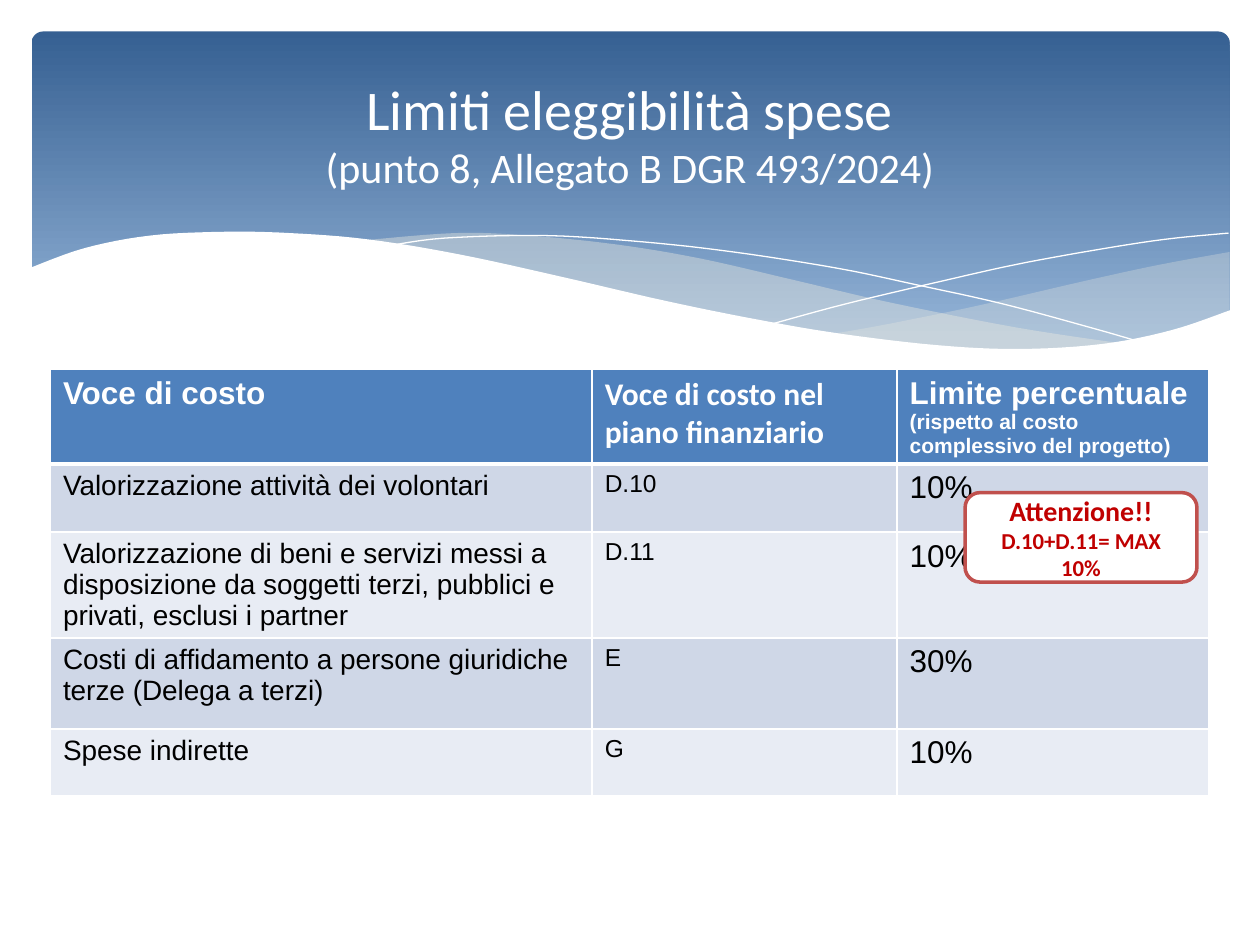
from dataclasses import dataclass

from lxml import etree
from pptx import Presentation
from pptx.dml.color import RGBColor
from pptx.enum.shapes import MSO_SHAPE
from pptx.enum.text import MSO_ANCHOR, PP_ALIGN
from pptx.oxml.ns import qn
from pptx.util import Inches, Pt

ROUNDED = MSO_SHAPE.ROUNDED_RECTANGLE
MIDDLE, TOP = MSO_ANCHOR.MIDDLE, MSO_ANCHOR.TOP
CENTER = PP_ALIGN.CENTER


@dataclass(frozen=True)
class Theme:
    """Colours, fonts and type sizes of the slide."""
    white: str = "FFFFFF"
    black: str = "000000"
    band_top: str = "366092"
    band_bottom: str = "93B3D7"
    wave: str = "EEECE1"
    header: str = "4F81BD"
    stripes: tuple = ("CFD7E7", "E8ECF4")
    alert_line: str = "C0504D"
    alert_text: str = "C00000"
    head_font: str = "Calibri"
    body_font: str = "Arial"
    title: int = 32
    subtitle: int = 24
    table_head: int = 18
    table_note: int = 12
    columns: tuple = (16, 14, 18)
    alert: int = 16
    alert_note: int = 13


T = Theme()

RIGHT_WAVE = (
    [(9.51, 1.75), (8.96, 1.85), (8.36, 1.98), (7.54, 2.17), (6.81, 2.32), (6.36, 2.4)],
    [(6.36, 2.4), (6.94, 2.47), (7.56, 2.52), (8.1, 2.52), (8.64, 2.47), (9.1, 2.37),
     (9.51, 2.22)],
)
MIDDLE_WAVE = (
    [(8.68, 2.48), (7.82, 2.35), (6.81, 2.15), (6.04, 1.97), (5.3, 1.8), (4.64, 1.69),
     (3.95, 1.62), (3.36, 1.6), (2.61, 1.66)],
    [(2.61, 1.66), (3.37, 1.78), (4.24, 1.97), (5.05, 2.15), (5.93, 2.33), (6.7, 2.45),
     (7.48, 2.52), (8.03, 2.53), (8.68, 2.48)],
)
FALLING_LINE = [(2.84, 1.7), (3.28, 1.64), (4.08, 1.62), (4.85, 1.67), (5.57, 1.75),
                (6.4, 1.88), (7.02, 2.01), (7.7, 2.16), (8.44, 2.36), (8.82, 2.47)]
RISING_LINE = [(5.88, 2.32), (6.47, 2.16), (7.23, 1.98), (7.81, 1.85), (8.41, 1.74),
               (8.99, 1.65), (9.5, 1.6)]
LOWER_EDGE = [(9.52, 2.21), (9.05, 2.37), (8.5, 2.48), (7.84, 2.52), (7.19, 2.49),
              (6.43, 2.4), (5.78, 2.29), (5.04, 2.14), (4.22, 1.95), (3.4, 1.77),
              (2.67, 1.65), (2.05, 1.6), (1.52, 1.59), (0.94, 1.62), (0.42, 1.72),
              (-0.02, 1.88)]

HEADERS = ["Voce di costo", "Voce di costo nel piano finanziario", "Limite percentuale "]
HEADER_NOTE = "(rispetto al costo complessivo del progetto)"
ROWS = [
    ("Valorizzazione attività dei volontari", "D.10", "10%"),
    ("Valorizzazione di beni e servizi messi a disposizione da soggetti terzi, "
     "pubblici e privati, esclusi i partner", "D.11", "10%"),
    ("Costi di affidamento a persone giuridiche terze (Delega a terzi)", "E", "30%"),
    ("Spese indirette", "G", "10%"),
]
COL_WIDTHS = [4.3, 2.42, 2.47]
ROW_HEIGHTS = [0.75, 0.54, 0.84, 0.72, 0.53]


def rgb(value):
    """Return the colour of a hex string."""
    return RGBColor.from_string(value)


def add_text(p, text, size, font=T.head_font, color=T.white, bold=False):
    """Add a formatted run to a paragraph."""
    r = p.add_run()
    r.text = text
    r.font.name, r.font.size, r.font.bold = font, Pt(size), bold
    r.font.color.rgb = rgb(color)


def spline(points, steps=6):
    """Return points along a Catmull-Rom curve through the given points."""
    ends = [points[0], *points, points[-1]]
    curve = [points[0]]
    for a, b, c, d in zip(ends, ends[1:], ends[2:], ends[3:]):
        for i in range(1, steps + 1):
            t = i / steps
            curve.append(tuple(
                (2 * q + (r - p) * t + (2 * p - 5 * q + 4 * r - s) * t ** 2
                 + (3 * q - p - 3 * r + s) * t ** 3) / 2
                for p, q, r, s in zip(a, b, c, d)))
    return curve


def add_curve(slide, box, points, fill=None, alpha=100):
    """Draw a filled outline, or a thin white line when no fill is given."""
    x, y = box[:2]
    pts = [(Inches(x + px), Inches(y + py)) for px, py in points]
    fb = slide.shapes.build_freeform(*pts[0])
    fb.add_line_segments(pts[1:], close=fill is not None)
    sp = fb.convert_to_shape()
    sp.shadow.inherit = False
    if fill is None:
        sp.fill.background()
        sp.line.color.rgb = rgb(T.white)
        sp.line.width = Pt(0.75)
        return
    sp.line.fill.background()
    sp.fill.solid()
    sp.fill.fore_color.rgb = rgb(fill)
    color = sp._element.spPr.find(qn("a:solidFill"))[0]
    etree.SubElement(color, qn("a:alpha"), val=str(alpha * 1000))


def add_banner(slide, box):
    """Draw the gradient band with its waves."""
    sp = slide.shapes.add_shape(ROUNDED, *map(Inches, box))
    sp.adjustments[0] = 0.034
    sp.shadow.inherit = False
    sp.line.fill.background()
    sp.fill.gradient()
    sp.fill.gradient_angle = 270
    stops = zip(sp.fill.gradient_stops, (T.band_top, T.band_bottom), (0, 0.9))
    for stop, color, position in stops:
        stop.color.rgb = rgb(color)
        stop.position = position
    for (upper, lower), alpha in ((RIGHT_WAVE, 29), (MIDDLE_WAVE, 40)):
        add_curve(slide, box, spline(upper) + spline(lower), T.wave, alpha)
    for line in (FALLING_LINE, RISING_LINE):
        add_curve(slide, box, spline(line))
    corners = [(-0.02, 3.04), (9.52, 3.04)]
    add_curve(slide, box, spline(LOWER_EDGE) + corners, T.white)


def add_title(slide, box):
    """Place the title and its subtitle over the band."""
    sp = slide.shapes.title
    sp.left, sp.top, sp.width, sp.height = map(Inches, box)
    slide.shapes._spTree.append(sp._element)
    tf = sp.text_frame
    tf.vertical_anchor = MIDDLE
    p = tf.paragraphs[0]
    p.alignment = CENTER
    add_text(p, "Limiti eleggibilità spese", T.title)
    p.add_line_break()
    add_text(p, "(punto 8, Allegato B DGR 493/2024)", T.subtitle)


def format_cell(cell, fill, top=1, bottom=1):
    """Set the fill and white borders of a cell."""
    cell.vertical_anchor = TOP
    cell.fill.solid()
    cell.fill.fore_color.rgb = rgb(fill)
    tc_pr = cell._tc.get_or_add_tcPr()
    for i, (side, width) in enumerate(zip("LRTB", (1, 1, top, bottom))):
        ln = etree.Element(qn(f"a:ln{side}"), w=str(Pt(width)))
        solid = etree.SubElement(ln, qn("a:solidFill"))
        etree.SubElement(solid, qn("a:srgbClr"), val=T.white)
        tc_pr.insert(i, ln)


def add_cost_table(slide, box):
    """Add the table of cost items and limits."""
    shape = slide.shapes.add_table(len(ROWS) + 1, len(HEADERS), *map(Inches, box))
    table = shape.table
    for col, width in zip(table.columns, COL_WIDTHS):
        col.width = Inches(width)
    for row, height in zip(table.rows, ROW_HEIGHTS):
        row.height = Inches(height)
    fonts = (T.body_font, T.head_font, T.body_font)
    for j, (text, font) in enumerate(zip(HEADERS, fonts)):
        cell = table.cell(0, j)
        format_cell(cell, T.header, bottom=3)
        add_text(cell.text_frame.paragraphs[0], text, T.table_head, font, bold=True)
    add_text(cell.text_frame.paragraphs[0], HEADER_NOTE, T.table_note, T.body_font,
             bold=True)
    for i, row in enumerate(ROWS):
        for j, (text, size) in enumerate(zip(row, T.columns)):
            cell = table.cell(i + 1, j)
            format_cell(cell, T.stripes[i % 2], top=1 if i else 3)
            add_text(cell.text_frame.paragraphs[0], text, size, T.body_font, T.black)


def add_alert(slide, box):
    """Add the warning box about the joint limit."""
    sp = slide.shapes.add_shape(ROUNDED, *map(Inches, box))
    sp.shadow.inherit = False
    sp.fill.solid()
    sp.fill.fore_color.rgb = rgb(T.white)
    sp.line.color.rgb = rgb(T.alert_line)
    sp.line.width = Pt(2)
    tf = sp.text_frame
    tf.word_wrap = True
    tf.vertical_anchor = MIDDLE
    lines = (("Attenzione!!", T.alert), ("D.10+D.11= MAX 10%", T.alert_note))
    for i, (text, size) in enumerate(lines):
        p = tf.add_paragraph() if i else tf.paragraphs[0]
        p.alignment = CENTER
        add_text(p, text, size, color=T.alert_text, bold=True)


def main():
    """Build and save the slide."""
    prs = Presentation()
    prs.slide_width, prs.slide_height = Inches(10), Inches(7.5)
    slide = prs.slides.add_slide(prs.slide_layouts[5])
    add_banner(slide, (0.25, 0.25, 9.51, 2.7))
    add_cost_table(slide, (0.4, 2.93, sum(COL_WIDTHS), sum(ROW_HEIGHTS)))
    add_title(slide, (0.5, 0.37, 9, 1.37))
    add_alert(slide, (7.66, 3.91, 1.84, 0.71))
    prs.save("out.pptx")


if __name__ == "__main__":
    main()
